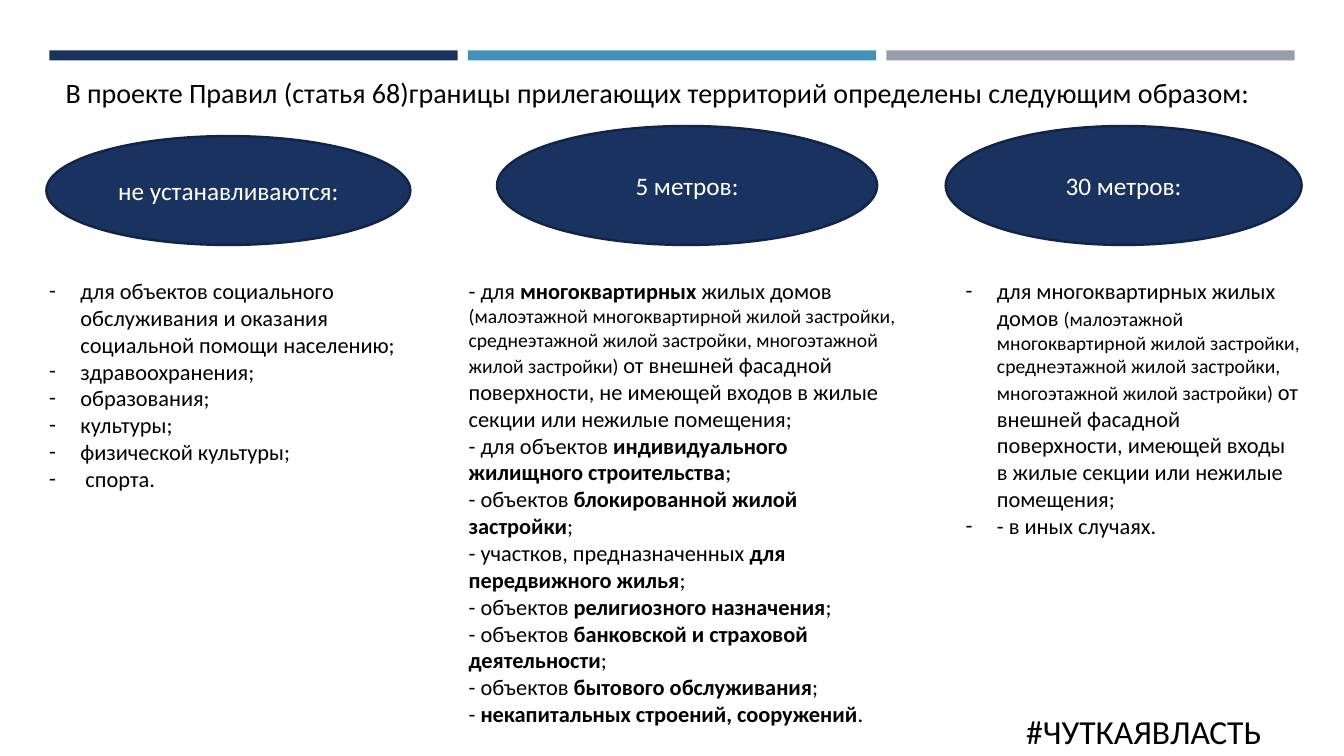
from dataclasses import dataclass

from lxml.etree import SubElement
from pptx import Presentation
from pptx.dml.color import RGBColor
from pptx.enum.shapes import MSO_SHAPE as Shape
from pptx.enum.text import MSO_ANCHOR as Anchor, MSO_AUTO_SIZE as AutoSize, PP_ALIGN as Align
from pptx.oxml.ns import qn
from pptx.util import Inches, Pt


@dataclass(frozen=True)
class Theme:
    font: str = "Calibri"
    navy: str = "1A3260"
    outline: str = "132547"
    blue: str = "4590B8"
    grey: str = "969FA7"
    black: str = "000000"
    white: str = "FFFFFF"
    hashtag: int = 24
    title: int = 20
    heading: int = 18
    body: int = 16
    note: int = 14


THEME = Theme()
PLAIN, BOLD, NOTE = "plain", "bold", "note"

TITLE = "В проекте Правил (статья 68)границы прилегающих территорий определены следующим образом:"
HASHTAG = "#ЧУТКАЯВЛАСТЬ"
BUILDING_TYPES = (
    "(малоэтажной многоквартирной жилой застройки, среднеэтажной жилой застройки, "
    "многоэтажной жилой застройки) "
)

NO_BOUNDARY = [
    [(text, PLAIN)]
    for text in (
        "для объектов социального обслуживания и оказания социальной помощи населению;",
        "здравоохранения;",
        "образования;",
        "культуры;",
        "физической культуры;",
        " спорта.",
    )
]
FIVE_METRES = [
    [
        ("- для ", PLAIN),
        ("многоквартирных", BOLD),
        (" жилых домов ", PLAIN),
        (BUILDING_TYPES, NOTE),
        ("от внешней фасадной поверхности, не имеющей входов в жилые секции "
         "или нежилые помещения;", PLAIN),
    ],
] + [
    [(lead, PLAIN), (subject, BOLD), (ending, PLAIN)]
    for lead, subject, ending in (
        ("- для объектов ", "индивидуального жилищного строительства", ";"),
        ("- объектов ", "блокированной жилой застройки", ";"),
        ("- участков, предназначенных ", "для передвижного жилья", ";"),
        ("- объектов ", "религиозного назначения", ";"),
        ("- объектов ", "банковской и страховой деятельности", ";"),
        ("- объектов ", "бытового обслуживания", ";"),
        ("- ", "некапитальных строений, сооружений", "."),
    )
]
THIRTY_METRES = [
    [
        ("для многоквартирных жилых домов ", PLAIN),
        (BUILDING_TYPES, NOTE),
        ("от внешней фасадной поверхности, имеющей входы в жилые секции "
         "или нежилые помещения;", PLAIN),
    ],
    [("- в иных случаях.", PLAIN)],
]

COLUMNS = [
    ("не устанавливаются:", (0.46, 1.35, 3.61, 1.08), NO_BOUNDARY, (0.39, 2.7, 3.76, 2.26), True),
    ("5 метров:", (4.93, 1.25, 3.77, 1.18), FIVE_METRES, (4.55, 2.7, 4.53, 5.15), False),
    ("30 метров:", (9.38, 1.25, 3.53, 1.18), THIRTY_METRES, (9.48, 2.7, 3.52, 2.96), True),
]


def inches(box):
    return [Inches(length) for length in box]


def add_span(para, text, size, color=THEME.black, bold=False):
    span = para.add_run()
    span.text = text
    span.font.name = THEME.font
    span.font.size = Pt(size)
    span.font.bold = bold
    span.font.color.rgb = RGBColor.from_string(color)


def add_dash(para):
    properties = para._p.get_or_add_pPr()
    properties.set("marL", str(Inches(0.31)))
    properties.set("indent", str(-Inches(0.31)))
    SubElement(properties, qn("a:buFont"), typeface=THEME.font)
    SubElement(properties, qn("a:buChar"), char="-")


def add_filled(page, kind, box, color):
    shape = page.shapes.add_shape(kind, *inches(box))
    shape.shadow.inherit = False
    shape.fill.solid()
    shape.fill.fore_color.rgb = RGBColor.from_string(color)
    shape.line.fill.background()
    return shape


def add_stripes(page, box):
    left, top, width, height = box
    gap = 0.1
    stripe = (width - 2 * gap) / 3
    for index, color in enumerate((THEME.navy, THEME.blue, THEME.grey)):
        add_filled(page, Shape.RECTANGLE, (left + index * (stripe + gap), top, stripe, height), color)


def add_title(page, box):
    title = page.shapes.title
    title.left, title.top, title.width, title.height = inches(box)
    frame = title.text_frame
    frame.word_wrap = True
    frame.auto_size = AutoSize.NONE
    frame.vertical_anchor = Anchor.TOP
    para = frame.paragraphs[0]
    para.alignment = Align.LEFT
    add_span(para, TITLE, THEME.title)


def add_heading(page, box, text):
    oval = add_filled(page, Shape.OVAL, box, THEME.navy)
    oval.line.color.rgb = RGBColor.from_string(THEME.outline)
    oval.line.width = Pt(1.75)
    oval.text_frame.vertical_anchor = Anchor.MIDDLE
    para = oval.text_frame.paragraphs[0]
    para.alignment = Align.CENTER
    add_span(para, text, THEME.heading, THEME.white)


def add_text(page, box):
    frame = page.shapes.add_textbox(*inches(box)).text_frame
    frame.word_wrap = True
    return frame


def add_rules(page, box, rules, dashed):
    frame = add_text(page, box)
    for index, rule in enumerate(rules):
        para = frame.add_paragraph() if index else frame.paragraphs[0]
        if dashed:
            add_dash(para)
        for text, style in rule:
            size = THEME.note if style == NOTE else THEME.body
            add_span(para, text, size, bold=style == BOLD)


def add_hashtag(page, box):
    add_span(add_text(page, box).paragraphs[0], HASHTAG, THEME.hashtag)


def main():
    deck = Presentation()
    deck.slide_width, deck.slide_height = Inches(13.33), Inches(7.5)
    page = deck.slides.add_slide(deck.slide_layouts[5])
    add_stripes(page, (0.49, 0.5, 12.35, 0.1))
    add_hashtag(page, (10.08, 7, 2.83, 0.5))
    add_title(page, (0.55, 0.7, 12.45, 0.44))
    for heading, oval_box, rules, rules_box, dashed in COLUMNS:
        add_heading(page, oval_box, heading)
        add_rules(page, rules_box, rules, dashed)
    deck.save("out.pptx")


if __name__ == "__main__":
    main()
